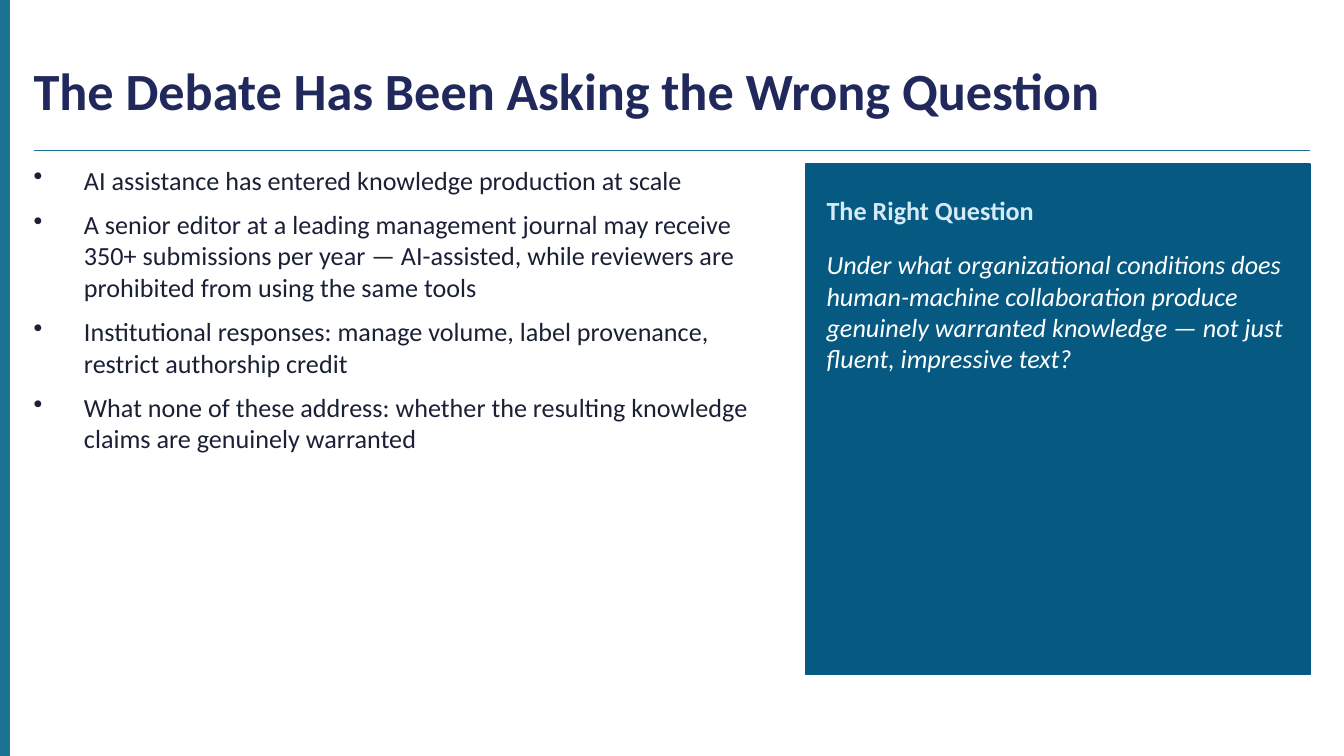
from pptx import Presentation
from pptx.dml.color import RGBColor
from pptx.enum.shapes import MSO_CONNECTOR, MSO_SHAPE
from pptx.enum.text import MSO_ANCHOR, PP_ALIGN
from pptx.oxml.ns import qn
from pptx.util import Pt
from lxml.etree import SubElement

PX = 4572  # EMU; 200 px to the inch
WIDTH, HEIGHT = 2000, 1125
MARGIN = 50
FONT = "Calibri"
COLORS = {
    "accent": "1C7293",
    "title": "21295C",
    "body": "1A2035",
    "panel": "065A82",
    "heading": "D6EAF8",
    "white": "FFFFFF",
}
TITLE = "The Debate Has Been Asking the Wrong Question"
POINTS = [
    "AI assistance has entered knowledge production at scale",
    "A senior editor at a leading management journal may receive 350+ submissions "
    "per year — AI-assisted, while reviewers are prohibited from using the same tools",
    "Institutional responses: manage volume, label provenance, restrict authorship credit",
    "What none of these address: whether the resulting knowledge claims are genuinely warranted",
]
HEADING = "The Right Question"
QUESTION = (
    "Under what organizational conditions does human-machine collaboration produce "
    "genuinely warranted knowledge — not just fluent, impressive text?"
)


def emu(*lengths):
    return [length * PX for length in lengths]


def color(name):
    return RGBColor.from_string(COLORS[name])


def set_frame(frame, anchor=MSO_ANCHOR.TOP):
    """Wrap the text, drop the insets and set the vertical anchor."""
    frame.word_wrap = True
    frame.vertical_anchor = anchor
    frame.margin_left = frame.margin_top = frame.margin_right = frame.margin_bottom = 0


def set_font(paragraph, color_name, size=14, bold=False, italic=False):
    font = paragraph.font
    font.name, font.size = FONT, Pt(size)
    font.bold, font.italic = bold, italic
    font.color.rgb = color(color_name)


def add_bullet(paragraph, indent):
    properties = paragraph._p.get_or_add_pPr()
    properties.set("marL", str(indent * PX))
    properties.set("indent", str(-indent * PX))
    SubElement(properties, qn("a:buChar")).set("char", "•")


def add_block(slide, left, top, width, height, color_name):
    shape = slide.shapes.add_shape(MSO_SHAPE.RECTANGLE, *emu(left, top, width, height))
    shape.shadow.inherit = False
    shape.fill.solid()
    shape.fill.fore_color.rgb = color(color_name)
    shape.line.color.rgb = color(color_name)
    shape.line.width = Pt(1)


def add_text(slide, left, top, width, height, text, color_name,
             anchor=MSO_ANCHOR.TOP, **style):
    frame = slide.shapes.add_textbox(*emu(left, top, width, height)).text_frame
    set_frame(frame, anchor)
    frame.text = text
    set_font(frame.paragraphs[0], color_name, **style)


def add_header(slide, left, top, width, height):
    """Title with a rule below it."""
    title = slide.shapes.title
    title.left, title.top, title.width, title.height = emu(left, top, width, height)
    set_frame(title.text_frame, MSO_ANCHOR.MIDDLE)
    title.text_frame.text = TITLE
    paragraph = title.text_frame.paragraphs[0]
    paragraph.alignment = PP_ALIGN.LEFT
    set_font(paragraph, "title", size=28, bold=True)

    rule_y = top + height + 12
    rule = slide.shapes.add_connector(
        MSO_CONNECTOR.STRAIGHT, *emu(left, rule_y, left + width, rule_y))
    rule.line.color.rgb = color("accent")
    rule.line.width = Pt(0.75)
    SubElement(rule._element.spPr, qn("a:effectLst"))


def add_points(slide, left, top, width, height):
    frame = slide.shapes.add_textbox(*emu(left, top, width, height)).text_frame
    set_frame(frame)
    frame.text = "\n".join(POINTS)
    for paragraph in frame.paragraphs:
        paragraph.space_after = Pt(7)
        add_bullet(paragraph, 75)
        set_font(paragraph, "body")


def add_question_panel(slide, left, top, width, height):
    padding = 30
    inner_left, inner_width = left + padding, width - 2 * padding
    add_block(slide, left, top, width, height, "panel")
    add_text(slide, inner_left, top + 26, inner_width, 84, HEADING, "heading",
             anchor=MSO_ANCHOR.MIDDLE, bold=True)
    add_text(slide, inner_left, top + 126, inner_width, height - 170, QUESTION, "white",
             italic=True)


def main():
    presentation = Presentation()
    presentation.slide_width, presentation.slide_height = emu(WIDTH, HEIGHT)
    slide = presentation.slides.add_slide(presentation.slide_layouts[5])
    add_block(slide, 0, 0, 14, HEIGHT, "accent")
    add_header(slide, MARGIN, 56, WIDTH - 2 * MARGIN, 156)
    add_points(slide, MARGIN, 244, 1100, 760)
    add_question_panel(slide, 1200, 244, WIDTH - MARGIN - 1200, 760)
    presentation.save("out.pptx")


if __name__ == "__main__":
    main()
